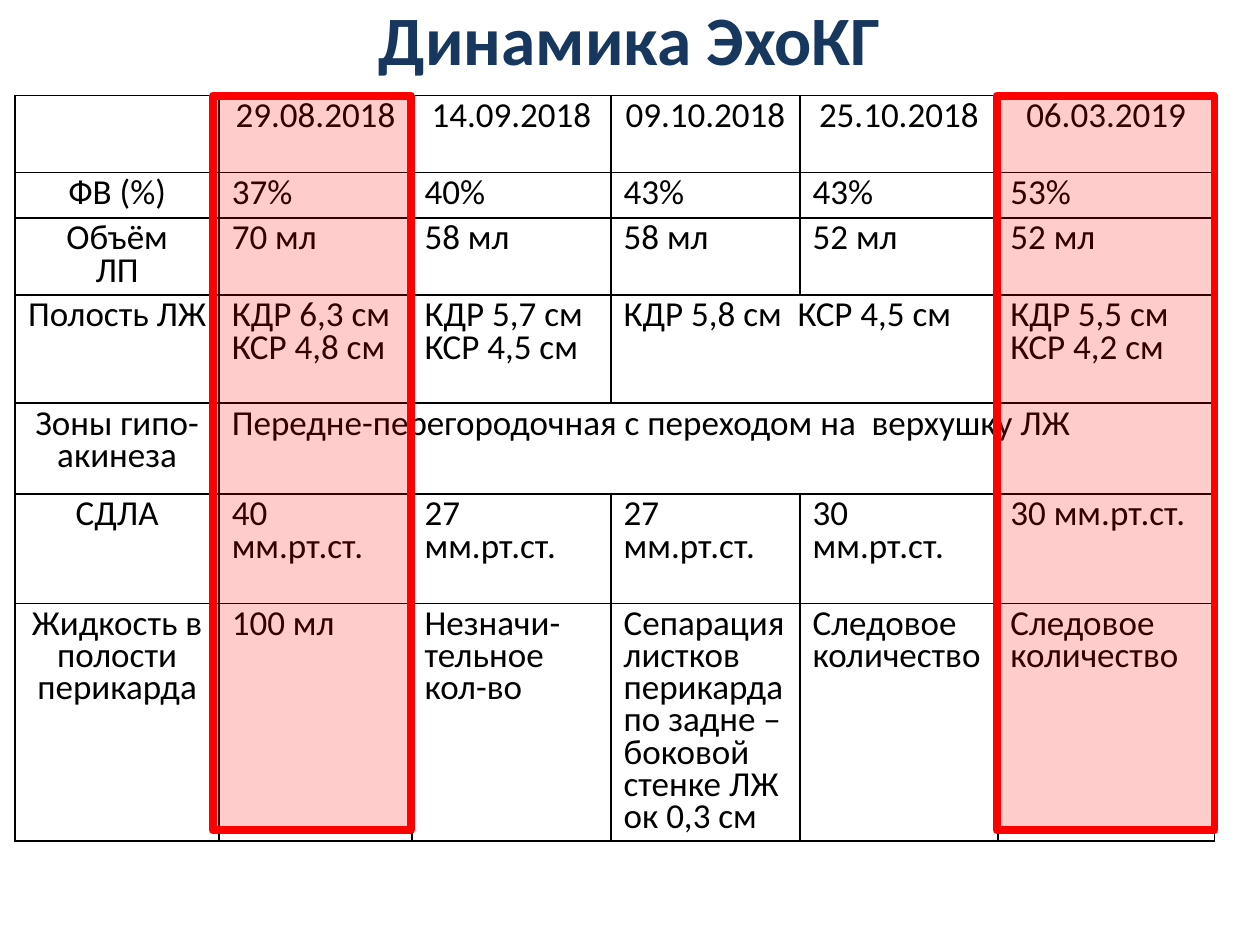
from lxml.etree import SubElement as Sub
from pptx import Presentation
from pptx.dml.color import RGBColor
from pptx.enum.shapes import MSO_SHAPE as Shape
from pptx.enum.text import MSO_ANCHOR as Anchor, PP_ALIGN as Align
from pptx.oxml import parse_xml
from pptx.oxml.ns import nsdecls, qn
from pptx.util import Inches, Pt

NAVY = RGBColor(0x17, 0x37, 0x5E)
BLACK = RGBColor(0, 0, 0)
RED = RGBColor(0xFF, 0, 0)

COLS = [1.62, 1.53, 1.58, 1.5, 1.57, 1.72]
ROWS = [0.61, 0.36, 0.61, 0.86, 0.72, 0.87, 1.88]
SPANS = [(3, 3, 4), (4, 1, 5)]
DATA = [
    ["", "29.08.2018", "14.09.2018", "09.10.2018", "25.10.2018", "06.03.2019"],
    ["ФВ (%)", "37%", "40%", "43%", "43%", "53%"],
    ["Объём\nЛП", "70 мл", "58 мл", "58 мл", "52 мл", "52 мл"],
    ["Полость ЛЖ", "КДР 6,3 см\nКСР 4,8 см", "КДР 5,7 см\nКСР 4,5 см",
     "КДР 5,8 см  КСР 4,5 см", "", "КДР 5,5 см\nКСР 4,2 см"],
    ["Зоны гипо-акинеза",
     "Передне-перегородочная с переходом на  верхушку ЛЖ", "", "", "", ""],
    ["СДЛА", "40\nмм.рт.ст.", "27 мм.рт.ст.", "27 мм.рт.ст.",
     "30 мм.рт.ст.", "30 мм.рт.ст."],
    ["Жидкость в полости перикарда", "100 мл", "Незначи-\nтельное\nкол-во",
     "Сепарация листков перикарда\nпо задне – боковой стенке ЛЖ ок 0,3 см",
     "Следовое\nколичество", "Следовое\nколичество"],
]


class Deck:
    fonts = {
        "title": {"name": "Calibri", "size": Pt(39.6), "bold": True},
        "cell": {"name": "Calibri", "size": Pt(20), "bold": False},
    }
    tints = {"title": NAVY, "cell": BLACK}

    def __init__(self):
        self.file = Presentation()
        self.file.slide_width = Inches(10)
        self.file.slide_height = Inches(7.5)
        self.slide = self.file.slides.add_slide(self.file.slide_layouts[5])

    def style(self, frame, kind, align, gap):
        for para in frame.paragraphs:
            para.alignment = align
            para.line_spacing = gap
            for key, value in self.fonts[kind].items():
                setattr(para.font, key, value)
            para.font.color.rgb = self.tints[kind]
            for run in para.runs:
                for key, value in self.fonts[kind].items():
                    setattr(run.font, key, value)
                run.font.color.rgb = self.tints[kind]

    def title(self, text, x, y, w, h):
        head = self.slide.shapes.title
        box = {"left": x, "top": y, "width": w, "height": h}
        for key, value in box.items():
            setattr(head, key, Inches(value))
        head.text_frame.text = text
        head.text_frame.vertical_anchor = Anchor.MIDDLE
        self.style(head.text_frame, "title", Align.CENTER, 1.0)

    def border(self, cell):
        props = cell._tc.get_or_add_tcPr()
        for spot, side in enumerate(("lnL", "lnR", "lnT", "lnB")):
            line = parse_xml(f'<a:{side} {nsdecls("a")} w="{Pt(1)}"/>')
            fill = Sub(line, qn("a:solidFill"))
            Sub(fill, qn("a:srgbClr"), val=str(BLACK))
            props.insert(spot, line)

    def table(self, data, x, y, cols, rows, spans):
        frame = self.slide.shapes.add_table(
            len(rows), len(cols), Inches(x), Inches(y),
            Inches(sum(cols)), Inches(sum(rows)))
        grid = frame.table
        for key in ("first_row", "horz_banding"):
            setattr(grid, key, False)
        for col, width in zip(grid.columns, cols):
            col.width = Inches(width)
        for row, height in zip(grid.rows, rows):
            row.height = Inches(height)
        for r, texts in enumerate(data):
            for c, text in enumerate(texts):
                cell = grid.cell(r, c)
                cell.text = text
                cell.fill.background()
                self.border(cell)
                align = Align.LEFT if r and c else Align.CENTER
                self.style(cell.text_frame, "cell", align, 0.75)
        for r, start, end in spans:
            grid.cell(r, start).merge(grid.cell(r, end))

    def frame(self, x, y, w, h):
        box = self.slide.shapes.add_shape(
            Shape.RECTANGLE, Inches(x), Inches(y), Inches(w), Inches(h))
        box.shadow.inherit = False
        box.fill.solid()
        box.fill.fore_color.rgb = RED
        tint = box._element.spPr.find(qn("a:solidFill"))[0]
        Sub(tint, qn("a:alpha"), val="20000")
        box.line.color.rgb = RED
        box.line.width = Pt(4.5)


def main():
    deck = Deck()
    deck.title("Динамика ЭхоКГ", 0.5, 0, 9, 0.6)
    deck.table(DATA, 0.12, 0.76, COLS, ROWS, SPANS)
    for x, w in ((1.69, 1.57), (7.91, 1.73)):
        deck.frame(x, 0.76, w, 5.83)
    deck.file.save("out.pptx")


if __name__ == "__main__":
    main()
